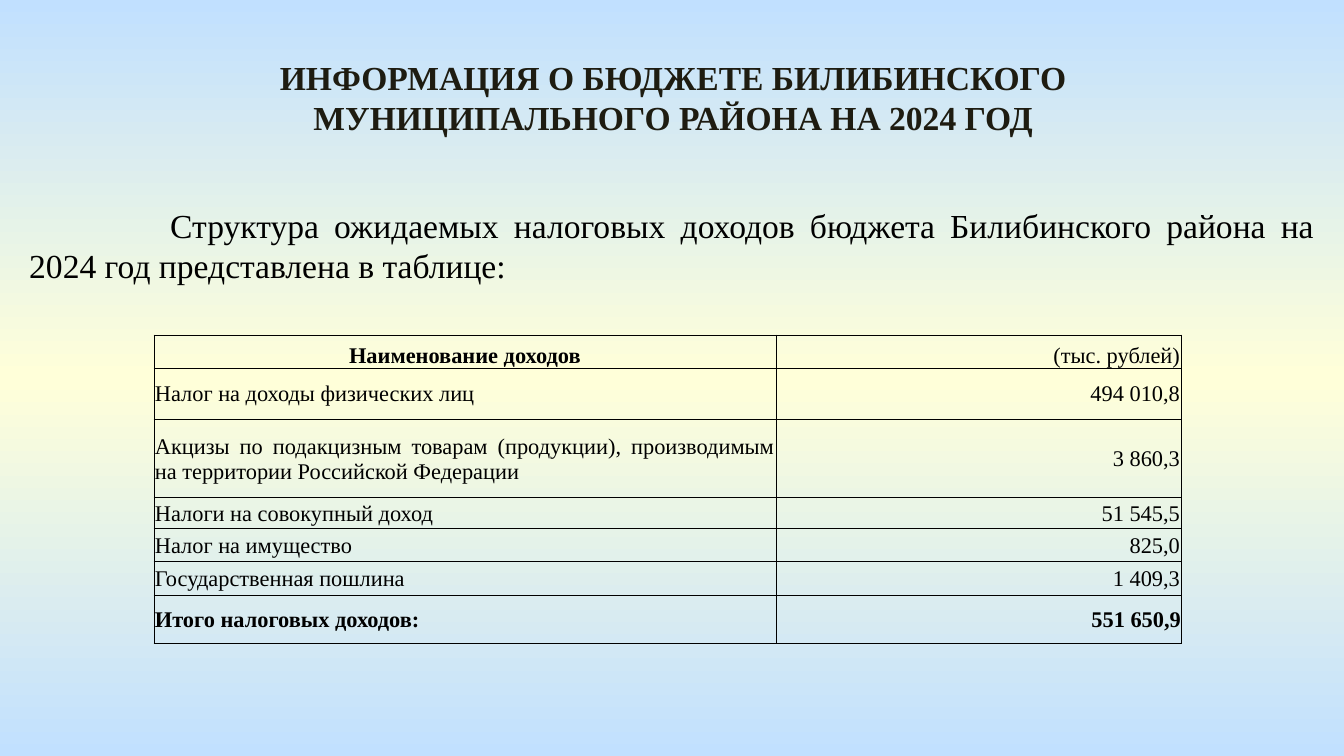
from copy import deepcopy
from dataclasses import dataclass

from lxml.etree import SubElement
from pptx import Presentation
from pptx.dml.color import RGBColor
from pptx.enum.text import MSO_ANCHOR, MSO_AUTO_SIZE, PP_ALIGN
from pptx.oxml.ns import qn
from pptx.util import Emu, Pt

EMU_PER_PX = 914400 / 134.4
FONT = "Times New Roman"
COLORS = {
    "sky": "C1E0FF",
    "cream": "FFFFD9",
    "title": "1E1C11",
    "ink": "000000",
}


@dataclass
class TextBlock:
    text: str
    left: int
    top: int
    width: int
    height: int
    align: PP_ALIGN
    color: str = "ink"
    bold: bool = False
    indent: int = 0


@dataclass
class IncomeRow:
    name: str
    amount: str
    height: int
    name_bold: bool = False
    amount_bold: bool = False
    name_align: PP_ALIGN = PP_ALIGN.JUSTIFY
    anchor: MSO_ANCHOR = MSO_ANCHOR.MIDDLE


BLOCKS = [
    TextBlock("ИНФОРМАЦИЯ О БЮДЖЕТЕ БИЛИБИНСКОГО МУНИЦИПАЛЬНОГО РАЙОНА НА 2024 ГОД",
              154, 50, 1039, 95, PP_ALIGN.CENTER, "title", True),
    TextBlock("Структура ожидаемых налоговых доходов бюджета Билибинского района "
              "на 2024 год представлена в таблице:",
              16, 198, 1312, 95, PP_ALIGN.JUSTIFY, indent=141),
]
TABLE_LEFT, TABLE_TOP = 154, 335
COLUMN_WIDTHS = [622, 405]
ROWS = [
    IncomeRow("Наименование доходов", "(тыс. рублей)", 33, name_bold=True,
              name_align=PP_ALIGN.CENTER, anchor=MSO_ANCHOR.BOTTOM),
    IncomeRow("Налог на доходы физических лиц", "494 010,8", 52),
    IncomeRow("Акцизы по подакцизным товарам (продукции), производимым "
              "на территории Российской Федерации", "3 860,3", 78),
    IncomeRow("Налоги на совокупный доход", "51 545,5", 31),
    IncomeRow("Налог на имущество", "825,0", 33),
    IncomeRow("Государственная пошлина", "1 409,3", 34),
    IncomeRow("Итого налоговых доходов:", "551 650,9", 48, True, True),
]


def px(value: int) -> Emu:
    return Emu(round(value * EMU_PER_PX))


def rgb(name: str) -> RGBColor:
    return RGBColor.from_string(COLORS[name])


def write(frame, text: str, size: int, align: PP_ALIGN, color: str, bold: bool):
    para = frame.paragraphs[0]
    para.text = text
    para.alignment = align
    for span in para.runs:
        span.font.name = FONT
        span.font.size = Pt(size)
        span.font.bold = bold
        span.font.color.rgb = rgb(color)
    return para


def paint_background(page) -> None:
    fill = page.background.fill
    fill.gradient()
    fill.gradient_angle = 270
    first, middle = fill.gradient_stops
    first.color.rgb, first.position = rgb("sky"), 0
    middle.color.rgb, middle.position = rgb("cream"), 0.5
    stops = page.element.find(".//" + qn("a:gsLst"))
    last = deepcopy(stops[0])
    last.set("pos", "100000")
    stops.append(last)


def draw_block(page, block: TextBlock) -> None:
    box = page.shapes.add_textbox(px(block.left), px(block.top), px(block.width), px(block.height))
    frame = box.text_frame
    frame.word_wrap = True
    frame.auto_size = MSO_AUTO_SIZE.SHAPE_TO_FIT_TEXT
    para = write(frame, block.text, 18, block.align, block.color, block.bold)
    if block.indent:
        properties = para._p.get_or_add_pPr()
        properties.set("marL", "0")
        properties.set("indent", str(px(block.indent)))


def draw_borders(cell) -> None:
    properties = cell._tc.get_or_add_tcPr()
    for index, side in enumerate(("lnL", "lnR", "lnT", "lnB")):
        line = SubElement(properties, qn(f"a:{side}"), w=str(Pt(0.5)))
        solid = SubElement(line, qn("a:solidFill"))
        SubElement(solid, qn("a:srgbClr"), val=COLORS["ink"])
        properties.insert(index, line)


def draw_cell(cell, text: str, align: PP_ALIGN, bold: bool, anchor: MSO_ANCHOR, margin: int) -> None:
    cell.fill.background()
    cell.vertical_anchor = anchor
    cell.margin_left = cell.margin_right = cell.margin_top = px(margin)
    cell.margin_bottom = 0
    write(cell.text_frame, text, 12, align, "ink", bold)
    draw_borders(cell)


def draw_table(page) -> None:
    table = page.shapes.add_table(
        len(ROWS), len(COLUMN_WIDTHS), px(TABLE_LEFT), px(TABLE_TOP),
        px(sum(COLUMN_WIDTHS)), px(sum(row.height for row in ROWS))).table
    table.first_row = table.horz_banding = False
    for column, width in zip(table.columns, COLUMN_WIDTHS):
        column.width = px(width)
    for index, row in enumerate(ROWS):
        table.rows[index].height = px(row.height)
        draw_cell(table.cell(index, 0), row.name, row.name_align, row.name_bold, row.anchor, 1)
        draw_cell(table.cell(index, 1), row.amount, PP_ALIGN.RIGHT, row.amount_bold,
                  row.anchor, 0 if row.amount_bold else 1)


def main() -> None:
    deck = Presentation()
    deck.slide_width, deck.slide_height = px(1344), px(756)
    page = deck.slides.add_slide(deck.slide_layouts[6])
    paint_background(page)
    for block in BLOCKS:
        draw_block(page, block)
    draw_table(page)
    deck.save("out.pptx")


if __name__ == "__main__":
    main()
